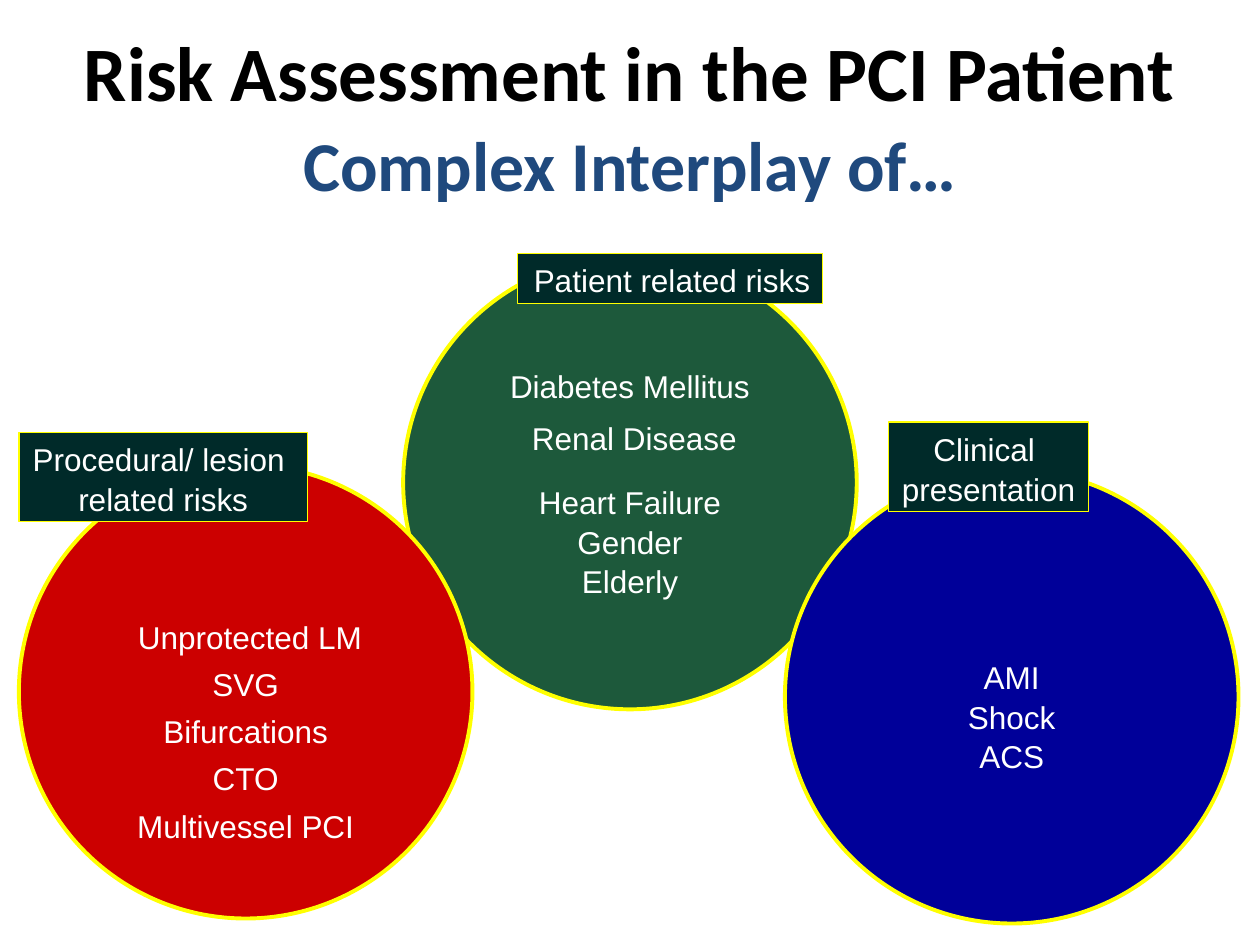
from pptx import Presentation
from pptx.dml.color import RGBColor
from pptx.enum.shapes import MSO_SHAPE
from pptx.enum.text import MSO_ANCHOR, MSO_AUTO_SIZE, PP_ALIGN
from pptx.util import Inches, Pt

OVAL, RECT = MSO_SHAPE.OVAL, MSO_SHAPE.RECTANGLE
MIDDLE, TOP = MSO_ANCHOR.MIDDLE, MSO_ANCHOR.TOP
CENTER, RIGHT = PP_ALIGN.CENTER, PP_ALIGN.RIGHT
GROW = MSO_AUTO_SIZE.SHAPE_TO_FIT_TEXT
COLORS = {
    "title": "000000", "subtitle": "1F497D", "text": "FFFFFF",
    "outline": "FFFF00", "label": "002A29",
    "patient": "1D593B", "procedural": "CC0000", "clinical": "000099",
}
DIAMETER = 3.6
RISKS = [
    {"circle": (3.2, 2.03), "color": "patient", "label": (4.11, 2.01, 2.42, 0.4),
     "heading": ["Patient related risks"], "align": RIGHT,
     "factors": [("Diabetes Mellitus", 0), (" Renal Disease", 7), ("Heart Failure", 14),
                 ("Gender", 0), ("Elderly", 0)],
     "spacing": 1.05, "inset": 0.05},
    {"circle": (0.15, 3.69), "color": "procedural", "label": (0.15, 3.43, 2.29, 0.71),
     "heading": ["Procedural/ lesion ", "related risks"], "align": CENTER,
     "factors": [(" Unprotected LM", 0), ("SVG", 0), ("Bifurcations", 0), ("CTO", 0),
                 ("Multivessel PCI", 0)],
     "spacing": 1.25, "inset": 0.6},
    {"circle": (6.23, 3.73), "color": "clinical", "label": (7.05, 3.35, 1.59, 0.71),
     "heading": ["Clinical ", "presentation"], "align": CENTER,
     "factors": [("AMI", 0), ("Shock", 0), ("ACS", 0)],
     "spacing": 1.05, "inset": 0.35},
]


def rgb(name):
    """Return the named colour."""
    return RGBColor.from_string(COLORS[name])


def add_text(paragraph, text, size, color, font="Arial", bold=False):
    """Append one formatted run to a paragraph."""
    run = paragraph.add_run()
    run.text = text
    run.font.name, run.font.size, run.font.bold = font, Pt(size), bold
    run.font.color.rgb = rgb(color)


def add_panel(slide, kind, box, color, line_width, anchor):
    """Draw an outlined shape and return its unwrapped text frame."""
    panel = slide.shapes.add_shape(kind, *(Inches(length) for length in box))
    panel.shadow.inherit = False
    panel.fill.solid()
    panel.fill.fore_color.rgb = rgb(color)
    panel.line.color.rgb = rgb("outline")
    panel.line.width = Pt(line_width)
    panel.text_frame.word_wrap = False
    panel.text_frame.vertical_anchor = anchor
    return panel.text_frame


def fill_lines(frame, lines, align, spacing):
    """Write one paragraph for each pair of text and space before."""
    for index, (text, gap) in enumerate(lines):
        paragraph = frame.add_paragraph() if index else frame.paragraphs[0]
        paragraph.alignment = align
        paragraph.line_spacing = spacing
        paragraph.space_before = Pt(gap)
        add_text(paragraph, text, 18, "text")


def add_title(slide, box):
    """Write the two-line title centred on its box."""
    frame = slide.shapes.add_textbox(*(Inches(length) for length in box)).text_frame
    frame.word_wrap = True
    frame.vertical_anchor = MIDDLE
    heading = frame.paragraphs[0]
    heading.alignment = CENTER
    heading.line_spacing = 1.05
    add_text(heading, "Risk Assessment in the PCI Patient", 44, "title", "Calibri", True)
    heading.add_line_break()
    add_text(heading, "Complex Interplay of…", 40, "subtitle", "Calibri", True)


def add_risk(slide, risk):
    """Draw a risk circle with its factors and the label over its rim."""
    factors = add_panel(slide, OVAL, (*risk["circle"], DIAMETER, DIAMETER),
                        risk["color"], 2.25, MIDDLE)
    factors.margin_top = Inches(risk["inset"])
    fill_lines(factors, risk["factors"], CENTER, risk["spacing"])
    label = add_panel(slide, RECT, risk["label"], "label", 0.75, TOP)
    label.auto_size = GROW
    fill_lines(label, [(line, 0) for line in risk["heading"]], risk["align"], 1.05)


def main():
    """Build and save the slide."""
    deck = Presentation()
    deck.slide_width, deck.slide_height = Inches(10), Inches(7.5)
    slide = deck.slides.add_slide(deck.slide_layouts[6])
    add_title(slide, (0.17, 0.6, 9.66, 0.59))
    for risk in RISKS:
        add_risk(slide, risk)
    deck.save("out.pptx")


if __name__ == "__main__":
    main()
